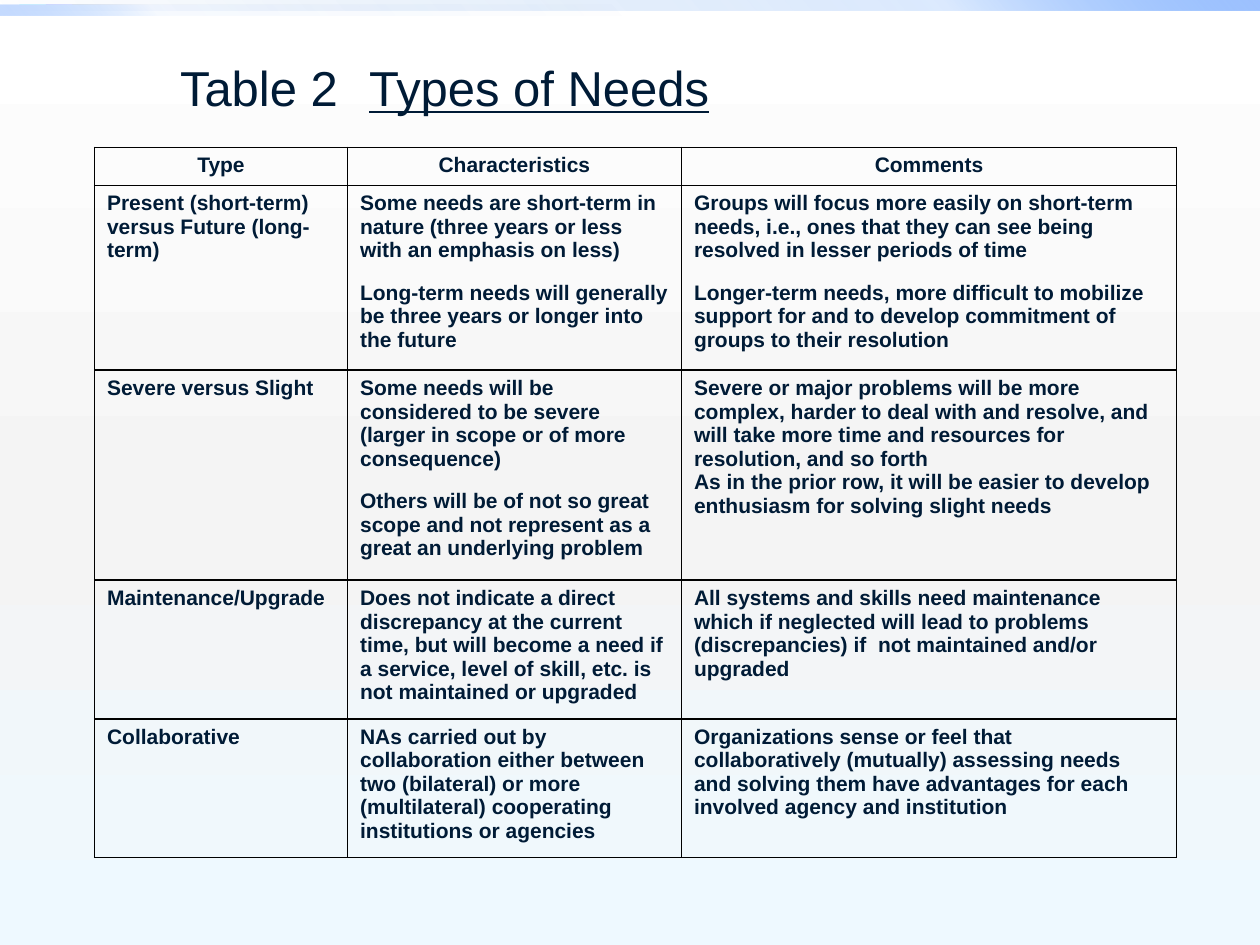
from lxml.etree import SubElement
from pptx import Presentation
from pptx.dml.color import RGBColor
from pptx.enum.shapes import MSO_SHAPE
from pptx.enum.text import PP_ALIGN
from pptx.oxml.ns import qn
from pptx.util import Pt

COLORS = {
    "text": "001B36", "border": "000000",
    "top": "FFFFFF", "middle": "F4F4F4", "bottom": "EEF9FF",
    "deep": "0058B7", "blue": "4F95FF", "pale": "9EC2FF",
}
FONT = "Arial"
PARAGRAPH_GAP = 11
COLUMN_WIDTHS = [144.6, 190.8, 283]
ROW_HEIGHTS = [21.7, 105.7, 120, 79.1, 79.1]
NEEDS = [
    [["Type"], ["Characteristics"], ["Comments"]],
    [
        ["Present (short-term) versus Future (long-term)"],
        ["Some needs are short-term in nature (three years or less with an emphasis on less)",
         "Long-term needs will generally be three years or longer into the future"],
        ["Groups will focus more easily on short-term needs, i.e., ones that they can see being "
         "resolved in lesser periods of time",
         "Longer-term needs, more difficult to mobilize support for and to develop commitment of "
         "groups to their resolution"],
    ],
    [
        ["Severe versus Slight"],
        ["Some needs will be considered to be severe (larger in scope or of more consequence)",
         "Others will be of not so great scope and not represent as a great an underlying problem"],
        ["Severe or major problems will be more complex, harder to deal with and resolve, and "
         "will take more time and resources for resolution, and so forth",
         "As in the prior row, it will be easier to develop enthusiasm for solving slight needs"],
    ],
    [
        ["Maintenance/Upgrade"],
        ["Does not indicate a direct discrepancy at the current time, but will become a need if "
         "a service, level of skill, etc. is not maintained or upgraded"],
        ["All systems and skills need maintenance which if neglected will lead to problems "
         "(discrepancies) if  not maintained and/or upgraded"],
    ],
    [
        ["Collaborative"],
        ["NAs carried out by collaboration either between two (bilateral) or more (multilateral) "
         "cooperating institutions or agencies"],
        ["Organizations sense or feel that collaboratively (mutually) assessing needs and "
         "solving them have advantages for each involved agency and institution"],
    ],
]
TIGHT_CELLS = {(2, 2)}


def set_gradient(owner, fill, stops, angle):
    fill.gradient()
    gradient = owner._element.find(".//" + qn("a:gradFill"))
    stop_list = gradient.find(qn("a:gsLst"))
    for stop in list(stop_list):
        stop_list.remove(stop)
    for position, color, opacity in stops:
        stop = SubElement(stop_list, qn("a:gs"), pos=str(position * 1000))
        shade = SubElement(stop, qn("a:srgbClr"), val=COLORS[color])
        if opacity < 100:
            SubElement(shade, qn("a:alpha"), val=str(opacity * 1000))
    gradient.find(qn("a:lin")).set("ang", str(angle * 60000))


def add_run(para, text, size, bold=False, underline=False):
    span = para.add_run()
    span.text = text
    span.font.name = FONT
    span.font.size = Pt(size)
    span.font.bold = bold
    span.font.underline = underline
    span.font.color.rgb = RGBColor.from_string(COLORS["text"])


def add_bar(page, left, top, width, height, stops, angle):
    bar = page.shapes.add_shape(MSO_SHAPE.RECTANGLE, Pt(left), Pt(top), Pt(width), Pt(height))
    bar.shadow.inherit = False
    bar.line.fill.background()
    set_gradient(bar, bar.fill, stops, angle)


def add_backdrop(page, width):
    set_gradient(page, page.background.fill,
                 [(0, "top", 100), (55, "middle", 100), (100, "bottom", 100)], 90)
    add_bar(page, 0, 0, width, 5.8,
            [(0, "deep", 0), (75, "blue", 20), (100, "pale", 100)], 315)
    add_bar(page, 0, 2.9, width / 2, 5.8,
            [(0, "deep", 0), (75, "blue", 5), (100, "pale", 60)], 135)


def add_title(page, left, top, width, height):
    box = page.shapes.add_textbox(Pt(left), Pt(top), Pt(width), Pt(height))
    frame = box.text_frame
    frame.word_wrap = False
    frame.margin_top = Pt(7)
    para = frame.paragraphs[0]
    add_run(para, "Table 2\t", 28)
    add_run(para, "Types of Needs", 28, underline=True)


def add_borders(cell):
    properties = cell._tc.get_or_add_tcPr()
    for side in ("a:lnL", "a:lnR", "a:lnT", "a:lnB"):
        line = SubElement(properties, qn(side), w=str(Pt(1)))
        fill = SubElement(line, qn("a:solidFill"))
        SubElement(fill, qn("a:srgbClr"), val=COLORS["border"])


def fill_cell(cell, texts, centered, gap):
    add_borders(cell)
    cell.fill.background()
    for index, text in enumerate(texts):
        frame = cell.text_frame
        para = frame.add_paragraph() if index else frame.paragraphs[0]
        para.alignment = PP_ALIGN.CENTER if centered else PP_ALIGN.LEFT
        if index:
            para.space_before = Pt(gap)
        add_run(para, text, 12, bold=True)


def add_needs_table(page, left, top):
    table = page.shapes.add_table(
        len(ROW_HEIGHTS), len(COLUMN_WIDTHS), Pt(left), Pt(top),
        Pt(sum(COLUMN_WIDTHS)), Pt(sum(ROW_HEIGHTS))).table
    table.first_row = False
    table.horz_banding = False
    for column, width in zip(table.columns, COLUMN_WIDTHS):
        column.width = Pt(width)
    for row, height in zip(table.rows, ROW_HEIGHTS):
        row.height = Pt(height)
    for row, entries in enumerate(NEEDS):
        for column, texts in enumerate(entries):
            gap = 0 if (row, column) in TIGHT_CELLS else PARAGRAPH_GAP
            fill_cell(table.cell(row, column), texts, row == 0, gap)


def main():
    deck = Presentation()
    deck.slide_width = Pt(720)
    deck.slide_height = Pt(540)
    page = deck.slides.add_slide(deck.slide_layouts[6])
    add_backdrop(page, 720)
    add_title(page, 95.8, 25.9, 356.4, 63.4)
    add_needs_table(page, 54, 84.2)
    deck.save("out.pptx")


if __name__ == "__main__":
    main()
